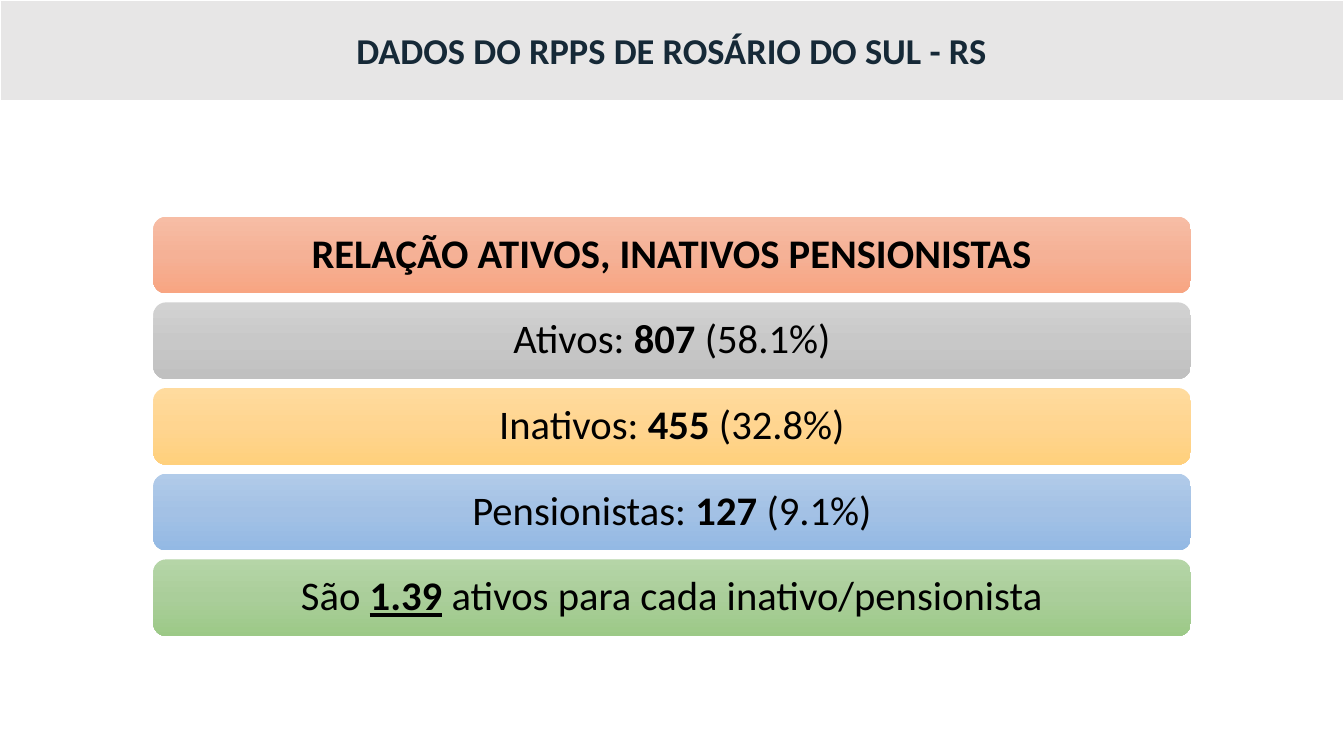
from copy import deepcopy

from pptx import Presentation
from pptx import util as u
from pptx.dml.color import RGBColor
from pptx.enum import shapes, text
from pptx.oxml.ns import qn

COLORS = {
    "header": "E7E6E6",
    "title": "162937",
    "white": "FFFFFF",
    "black": "000000",
}
GRADIENTS = {
    "orange": ("F7BDA5", "F5B196", "F8A582"),
    "gray": ("D2D2D2", "C8C8C8", "C0C0C0"),
    "yellow": ("FFDB9E", "FFD590", "FFD07C"),
    "blue": ("B1CBE9", "A3C1E5", "93B9E4"),
    "green": ("B5D5A7", "AACE9A", "9CC987"),
}
BARS = [
    ("orange", [("RELAÇÃO ATIVOS, INATIVOS PENSIONISTAS", "b")]),
    ("gray", [("Ativos: ", ""), ("807", "b"), (" (58.1%)", "")]),
    ("yellow", [("Inativos: ", ""), ("455", "b"), (" (32.8%)", "")]),
    ("blue", [("Pensionistas: ", ""), ("127", "b"), (" (9.1%)", "")]),
    ("green", [("São ", ""), ("1.39", "bu"), (" ativos para cada inativo/pensionista", "")]),
]
BAR_TOP = 2.15
BAR_PITCH = 0.85


class SlideBuilder:
    font = "Calibri"

    def __init__(self, slide):
        self.slide = slide

    def shape(self, kind, left, top, width, height):
        shape = self.slide.shapes.add_shape(
            kind, u.Inches(left), u.Inches(top), u.Inches(width), u.Inches(height))
        shape.shadow.inherit = False
        return shape

    def label(self, shape, runs, size, color):
        frame = shape.text_frame
        frame.word_wrap = True
        frame.vertical_anchor = text.MSO_ANCHOR.MIDDLE
        paragraph = frame.paragraphs[0]
        paragraph.alignment = text.PP_ALIGN.CENTER
        for words, style in runs:
            run = paragraph.add_run()
            run.text = words
            run.font.name = self.font
            run.font.size = u.Pt(size)
            run.font.bold = "b" in style
            run.font.underline = "u" in style
            run.font.color.rgb = RGBColor.from_string(COLORS[color])
        return paragraph

    def header(self, title):
        shape = self.shape(shapes.MSO_SHAPE.RECTANGLE, 0, 0, 13.33, 1)
        shape.fill.solid()
        shape.fill.fore_color.rgb = RGBColor.from_string(COLORS["header"])
        shape.line.color.rgb = RGBColor.from_string(COLORS["white"])
        shape.line.width = u.Pt(1)
        self.label(shape, [(title, "b")], 26, "title")

    def bar(self, top, gradient, runs):
        shape = self.shape(shapes.MSO_SHAPE.ROUNDED_RECTANGLE, 1.52, top, 10.29, 0.76)
        shape.line.fill.background()
        shape.fill.gradient()
        shape.fill.gradient_angle = 270
        stop_list = shape.element.spPr.find(".//" + qn("a:gsLst"))
        stop_list.insert(1, deepcopy(stop_list[0]))
        for index, stop in enumerate(shape.fill.gradient_stops):
            stop.position = index / 2
            stop.color.rgb = RGBColor.from_string(GRADIENTS[gradient][index])
        paragraph = self.label(shape, runs, 29, "black")
        paragraph.line_spacing = 0.9


def main():
    presentation = Presentation()
    presentation.slide_width = u.Inches(13.33)
    presentation.slide_height = u.Inches(7.5)
    builder = SlideBuilder(presentation.slides.add_slide(presentation.slide_layouts[6]))
    for row, (gradient, runs) in enumerate(BARS):
        builder.bar(BAR_TOP + row * BAR_PITCH, gradient, runs)
    builder.header("DADOS DO RPPS DE ROSÁRIO DO SUL - RS")
    presentation.save("out.pptx")


if __name__ == "__main__":
    main()
